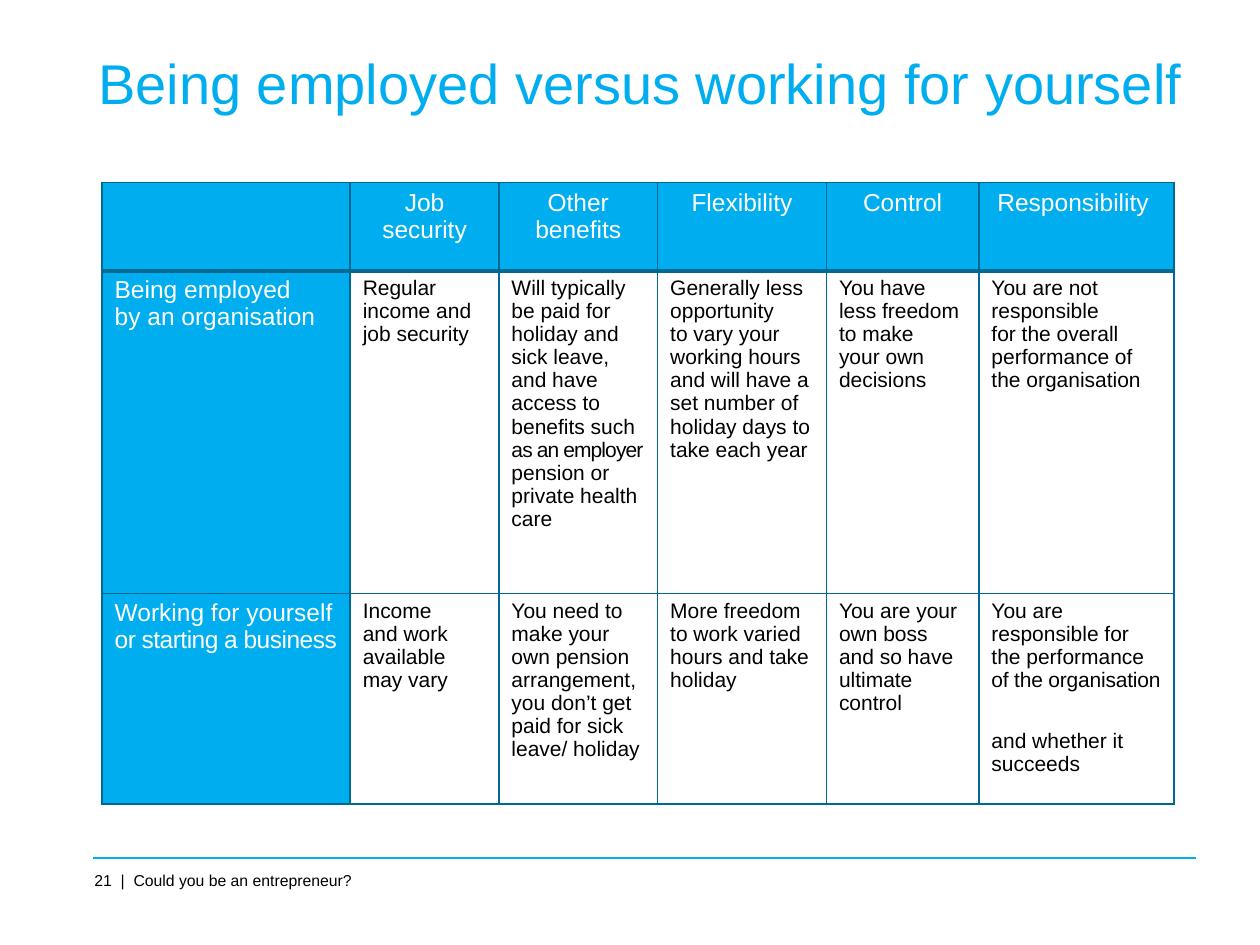
import pptx
import pptx.chart.data
import pptx.dml.color
import pptx.enum.shapes
import pptx.enum.text
import pptx.oxml
import pptx.oxml.ns
import pptx.util

Inches = pptx.util.Inches
Pt = pptx.util.Pt
ALIGN = pptx.enum.text.PP_ALIGN
ANCHOR = pptx.enum.text.MSO_ANCHOR

BLUE, DARK, WHITE, BLACK = "00AEEF", "006991", "FFFFFF", "000000"
COLS = [1.97, 1.18, 1.26, 1.34, 1.21, 1.55]
ROWS = [0.7, 2.56, 1.67]

# A cell is a list of (text, letter spacing in points) parts.
CELLS = [
    [
        [],
        [("Job security", 0)],
        [("Other benefits", 0)],
        [("Flexibility", 0)],
        [("Control", 0)],
        [("Responsibility ", 0)],
    ],
    [
        [("Being employed \nby an organisation", 0)],
        [("Regular income and job security", 0)],
        [("Will typically be paid for holiday and sick leave, and have "
          "access to benefits such ", 0),
         ("as an employer ", -0.5),
         ("pension or private health care", 0)],
        [("Generally less opportunity \nto vary your working hours and will "
          "have a set number of holiday days to take each year", 0)],
        [("You have \nless freedom \nto make \nyour own decisions", 0)],
        [("You are not responsible \nfor the overall performance of "
          "the organisation", 0)],
    ],
    [
        [("Working for yourself ", 0), ("or starting a business", -0.3)],
        [("Income \nand work available \nmay vary", 0)],
        [("You need to make your own pension arrangement, you don’t get "
          "paid for sick leave/ holiday", 0)],
        [("More freedom to work varied hours and take holiday", 0)],
        [("You are your own boss and so have ultimate control", 0)],
        [("You are responsible for \nthe performance ", 0),
         ("of the organisation \n", -0.1),
         ("and whether it succeeds", 0)],
    ],
]


def color(code):
    return pptx.dml.color.RGBColor.from_string(code)


def style(font, size, code):
    font.name = "Arial"
    font.size = Pt(size)
    font.color.rgb = color(code)


def add_text(slide, box, text, size, code, anchor):
    frame = slide.shapes.add_textbox(*map(Inches, box)).text_frame
    frame.word_wrap = True
    frame.vertical_anchor = anchor
    frame.margin_left = frame.margin_right = 0
    frame.margin_top = frame.margin_bottom = 0
    frame.text = text
    style(frame.paragraphs[0].runs[0].font, size, code)


def add_rule(slide, left, right, top):
    rule = slide.shapes.add_connector(
        pptx.enum.shapes.MSO_CONNECTOR.STRAIGHT,
        Inches(left), Inches(top), Inches(right), Inches(top))
    rule.line.color.rgb = color(BLUE)
    rule.line.width = Pt(1)
    rule._element.spPr.append(pptx.oxml.parse_xml(
        f'<a:effectLst {pptx.oxml.ns.nsdecls("a")}/>'))


def set_edges(cell, top, bottom):
    """Draw all four borders; the side ones are 1 pt wide."""
    props = cell._tc.get_or_add_tcPr()
    widths = {"L": 1, "R": 1, "T": top, "B": bottom}
    for spot, (side, width) in enumerate(widths.items()):
        props.insert(spot, pptx.oxml.parse_xml(
            f'<a:ln{side} {pptx.oxml.ns.nsdecls("a")} w="{Pt(width)}">'
            f'<a:solidFill><a:srgbClr val="{DARK}"/></a:solidFill>'
            f'</a:ln{side}>'))


def fill_text(para, parts, size, code):
    for text, gap in parts:
        for i, line in enumerate(text.split("\n")):
            if i:
                para.add_line_break()
            if line:
                run = para.add_run()
                run.text = line
                style(run.font, size, code)
                if gap:
                    run.font._element.set("spc", str(round(gap * 100)))


def add_grid(slide):
    grid = slide.shapes.add_table(
        len(ROWS), len(COLS), Inches(0.81), Inches(1.45),
        Inches(sum(COLS)), Inches(sum(ROWS))).table
    for col, width in zip(grid.columns, COLS):
        col.width = Inches(width)
    for row, height in zip(grid.rows, ROWS):
        row.height = Inches(height)
    for r, row in enumerate(CELLS):
        for c, parts in enumerate(row):
            cell = grid.cell(r, c)
            head = r == 0 or c == 0
            if head:
                cell.fill.solid()
                cell.fill.fore_color.rgb = color(BLUE)
            else:
                cell.fill.background()
            set_edges(cell, 3 if r == 1 else 1, 3 if r == 0 else 1)
            para = cell.text_frame.paragraphs[0]
            if r == 0:
                para.alignment = ALIGN.CENTER
            else:
                para.line_spacing = 0.98
            fill_text(para, parts, 14 if head else 12,
                      WHITE if head else BLACK)


def main():
    deck = pptx.Presentation()
    deck.slide_width = Inches(10)
    deck.slide_height = Inches(7.5)
    slide = deck.slides.add_slide(deck.slide_layouts[6])
    add_rule(slide, 0.74, 9.49, 6.81)
    add_text(slide, (0.78, 0.38, 8.82, 0.54),
             "Being employed versus working for yourself",
             32, BLUE, ANCHOR.MIDDLE)
    add_text(slide, (0.75, 6.91, 3.17, 0.15),
             "21  |  Could you be an entrepreneur?",
             9, BLACK, ANCHOR.BOTTOM)
    add_grid(slide)
    deck.save("out.pptx")


if __name__ == "__main__":
    main()
